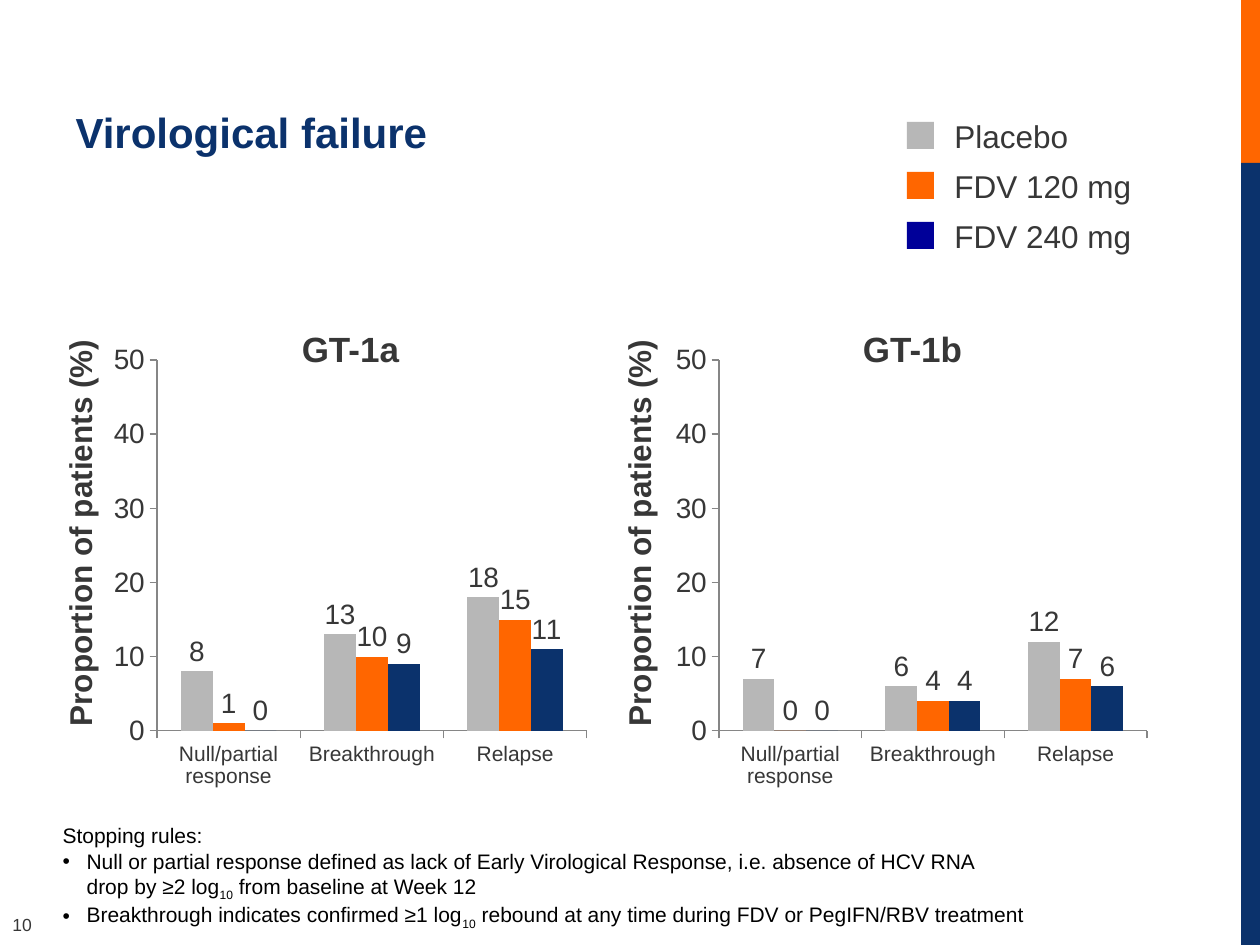
from lxml import etree
from pptx import Presentation
from pptx import util as u
from pptx.chart.data import CategoryChartData
from pptx.dml.color import RGBColor
from pptx.enum import chart as ch, shapes, text
from pptx.oxml import parse_xml
from pptx.oxml.ns import qn

SCALE = 914400 / 126
FONT, INK, NAVY, ORANGE, GREY = "Arial", "373737", "0B326C", "FF6600", "B7B7B7"
GROUPS = ["Null/partial response", "Breakthrough", "Relapse"]
CENTER, LEFT = text.PP_ALIGN.CENTER, text.PP_ALIGN.LEFT
NOTES = [
    (False, ["Stopping rules:"]),
    (True, ["Null or partial response defined as lack of Early Virological Response, "
            "i.e. absence of HCV RNA\ndrop by ≥2 log", "10", " from baseline at Week 12"]),
    (True, ["Breakthrough indicates confirmed ≥1 log", "10",
            " rebound at any time during FDV or PegIFN/RBV treatment"]),
]


def px(n):
    return u.Emu(round(n * SCALE))


def hue(code):
    return RGBColor.from_string(code)


def format(item, **values):
    for name, value in values.items():
        setattr(item, name, value)


def style(font, size, color=INK, bold=False):
    format(font, name=FONT, size=u.Pt(size), bold=bold)
    font.color.rgb = hue(color)


def place(shape, x, y, w, h):
    format(shape, left=px(x), top=px(y), width=px(w), height=px(h))


def add_rect(slide, box, color):
    rect = slide.shapes.add_shape(shapes.MSO_SHAPE.RECTANGLE, *map(px, box))
    rect.shadow.inherit = False
    rect.fill.solid()
    rect.fill.fore_color.rgb = hue(color)
    rect.line.fill.background()


def add_text(slide, box, words, size, bold=False, align=LEFT, turn=0, wrap=True):
    shape = slide.shapes.add_textbox(*map(px, box))
    shape.rotation = turn
    shape.text_frame.word_wrap = wrap
    para = shape.text_frame.paragraphs[0]
    format(para, text=words, alignment=align)
    style(para.runs[0].font, size, bold=bold)


def add_title(slide, words):
    title = slide.shapes.title
    place(title, 63, 23, 1134, 140)
    format(title.text_frame, text=words, vertical_anchor=text.MSO_ANCHOR.BOTTOM)
    para = title.text_frame.paragraphs[0]
    para.alignment = LEFT
    style(para.runs[0].font, 24, NAVY, True)


def set_bullet(para, shown):
    props = para._p.get_or_add_pPr()
    step = px(24) if shown else 0
    props.set("marL", str(step))
    props.set("indent", str(-step))
    mark = etree.SubElement(props, qn("a:buChar" if shown else "a:buNone"))
    if shown:
        mark.set("char", "•")


def add_notes(slide):
    body = slide.placeholders[1]
    place(body, 50, 815, 1180, 122)
    frame = body.text_frame
    format(frame, word_wrap=True, vertical_anchor=text.MSO_ANCHOR.BOTTOM)
    for i, (listed, parts) in enumerate(NOTES):
        para = frame.add_paragraph() if i else frame.paragraphs[0]
        format(para, space_before=u.Pt(0), alignment=LEFT)
        set_bullet(para, listed)
        for part in parts:
            for j, line in enumerate(part.split("\n")):
                if j:
                    para.add_line_break()
                run = para.add_run()
                run.text = line
                style(run.font, 12, "000000")
                if part == "10":
                    run.font._element.set("baseline", "-25000")


def set_plot(chart, box, plot):
    area = chart._chartSpace.chart.plotArea
    for old in area.findall(qn("c:layout")):
        area.remove(old)
    x, y, w, h = box
    left, top, wide, high = plot
    sizes = {"x": (left - x) / w, "y": (top - y) / h, "w": wide / w, "h": high / h}
    values = "".join(f'<c:{key} val="{size:.4f}"/>' for key, size in sizes.items())
    area.insert(0, parse_xml(
        '<c:layout xmlns:c="http://schemas.openxmlformats.org/drawingml/2006/chart">'
        '<c:manualLayout><c:layoutTarget val="inner"/><c:xMode val="edge"/>'
        f'<c:yMode val="edge"/>{values}</c:manualLayout></c:layout>'))


def add_chart(slide, box, plot, rows):
    data = CategoryChartData(number_format="0")
    data.categories = GROUPS
    for i, row in enumerate(rows, 1):
        data.add_series(f"Series {i}", row)
    kind = ch.XL_CHART_TYPE.COLUMN_CLUSTERED
    chart = slide.shapes.add_chart(kind, *map(px, box), data).chart
    format(chart, has_legend=False, has_title=False)
    style(chart.font, 18)
    set_plot(chart, box, plot)
    format(chart.plots[0], gap_width=150, overlap=0, vary_by_categories=False)
    for series, color in zip(chart.plots[0].series, [GREY, ORANGE, NAVY]):
        series.format.fill.solid()
        series.format.fill.fore_color.rgb = hue(color)
        labels = series.data_labels
        format(labels, show_value=True, position=ch.XL_LABEL_POSITION.OUTSIDE_END)
        style(labels.font, 16)
    for axis, size in [(chart.category_axis, 12), (chart.value_axis, 16)]:
        format(axis, has_major_gridlines=False, major_tick_mark=ch.XL_TICK_MARK.OUTSIDE)
        style(axis.tick_labels.font, size)
        axis.format.line.color.rgb = hue("868686")
        axis.format.line.width = u.Pt(0.75)
    format(chart.value_axis, minimum_scale=0, maximum_scale=50, major_unit=10)


def main():
    deck = Presentation()
    format(deck, slide_width=px(1260), slide_height=px(945))
    slide = deck.slides.add_slide(deck.slide_layouts[1])
    add_rect(slide, (1241, 0, 20, 163), ORANGE)
    add_rect(slide, (1241, 163, 20, 782), NAVY)
    add_text(slide, (0, 908, 47, 34), "10", 10, wrap=False)
    add_title(slide, "Virological failure")

    panels = [
        ("GT-1a", (103, 335, 494, 462), (157, 360, 430, 371), 276, -132,
         [(8, 13, 18), (1, 10, 15), (0, 9, 11)]),
        ("GT-1b", (667, 335, 490, 462), (719, 360, 428, 371), 838, 427,
         [(7, 6, 12), (0, 4, 7), (0, 4, 6)]),
    ]
    for name, box, plot, head, side, rows in panels:
        add_chart(slide, box, plot, rows)
        add_text(slide, (head, 321, 149, 55), name, 20, True, CENTER)
        add_text(slide, (side, 508, 423, 50), "Proportion of patients (%)",
                 18, True, CENTER, 270)

    keys = [("Placebo", GREY), ("FDV 120 mg", ORANGE), ("FDV 240 mg", "000099")]
    for i, (name, color) in enumerate(keys):
        add_text(slide, (942, 111 + 50 * i, 270, 50), name, 18)
        add_rect(slide, (907, 122 + 50 * i, 27, 27), color)

    add_notes(slide)
    deck.save("out.pptx")


if __name__ == "__main__":
    main()
